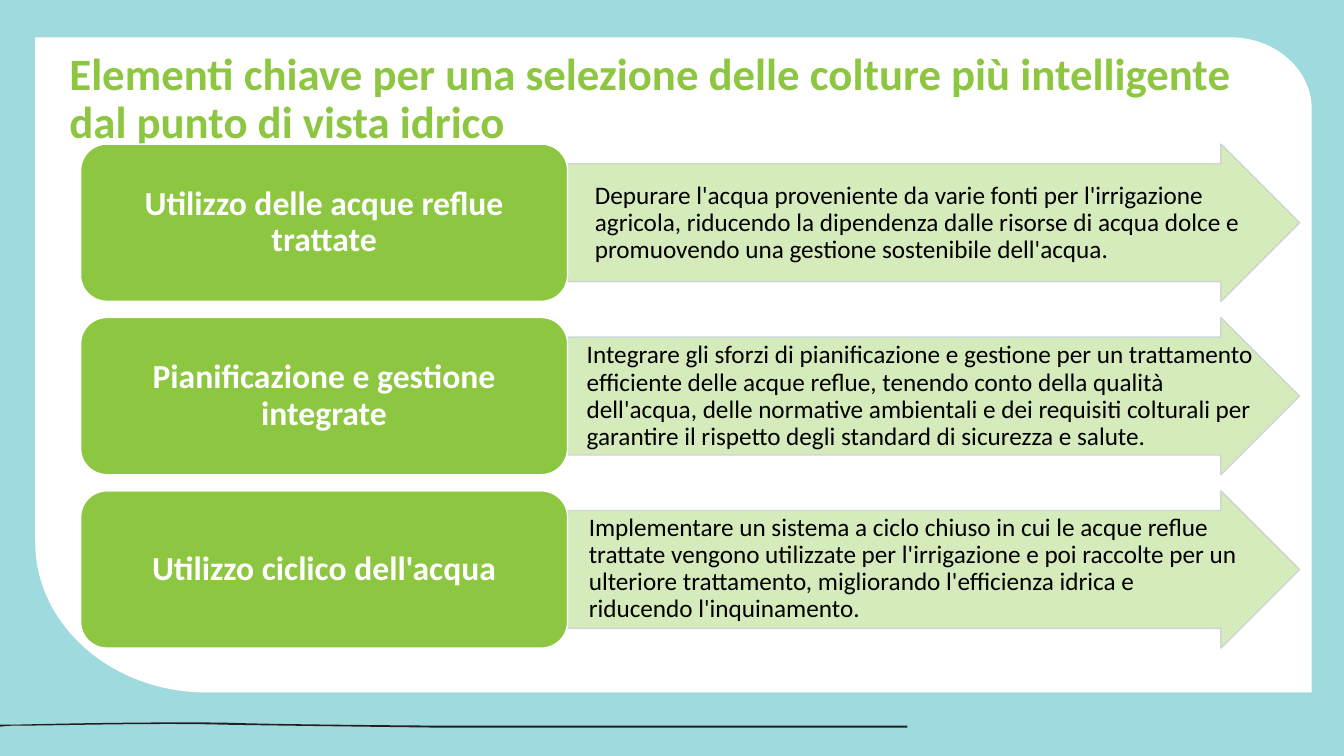
import pptx
import pptx.util
import pptx.dml.color
import pptx.enum.shapes
import pptx.enum.text
import pptx.oxml.ns
import lxml.etree

PX = 9144
MSO = pptx.enum.shapes.MSO_SHAPE
ANCHOR = pptx.enum.text.MSO_ANCHOR
ALIGN = pptx.enum.text.PP_ALIGN
qn = pptx.oxml.ns.qn
GREEN = "8DC641"
PALE_GREEN = "D6EBBB"


def color(value):
    return pptx.dml.color.RGBColor.from_string(value)


prs = pptx.Presentation()
prs.slide_width = 1333 * PX
prs.slide_height = 750 * PX
s = prs.slides.add_slide(prs.slide_layouts[6])

backdrop = s.shapes.add_shape(MSO.RECTANGLE, 0, 0, 1333 * PX, 750 * PX)
backdrop.shadow.inherit = False
backdrop.fill.solid()
backdrop.fill.fore_color.rgb = color("9FDADF")
backdrop.line.fill.background()

panel = [
    [(35, 37)], [(1220, 37)],
    [(1265, 37), (1301, 69), (1301, 108)],
    [(1301, 687)], [(205, 687)],
    [(111, 687), (35, 620), (35, 538)],
]
wave = [
    [(900, 722)], [(443, 722)],
    [(441, 722), (280, 720), (223, 719)],
    [(155, 717), (52, 720), (14, 720)],
    [(6, 720), (1, 721), (0, 721)],
    [(0, 719)],
    [(1, 719), (6, 719), (14, 719)],
    [(52, 718), (155, 716), (223, 717)],
    [(281, 719), (441, 720), (443, 720)],
    [(900, 720)],
]

for segments, fill in ((panel, "FFFFFF"), (wave, "231F20")):
    points = [point for segment in segments for point in segment]
    builder = s.shapes.build_freeform(*points[0], scale=PX)
    builder.add_line_segments(points[1:], close=True)
    sp = builder.convert_to_shape()
    sp.shadow.inherit = False
    sp.fill.solid()
    sp.fill.fore_color.rgb = color(fill)
    sp.line.fill.background()
    lines = iter(list(sp._element.iter(qn("a:lnTo"))))
    for segment in segments[1:]:
        parts = [next(lines) for _ in segment]
        if len(parts) == 3:
            bezier = lxml.etree.Element(qn("a:cubicBezTo"))
            parts[0].addprevious(bezier)
            for part in parts:
                bezier.append(part[0])
                part.getparent().remove(part)

title = s.shapes.add_textbox(59 * PX, 46 * PX, 1215 * PX, 88 * PX)
tf = title.text_frame
tf.word_wrap = True
p = tf.paragraphs[0]
p.text = "Elementi chiave per una selezione delle colture più intelligente dal punto di vista idrico"
p.line_spacing = 0.9
p.font.name = "Calibri"
p.font.size = pptx.util.Pt(32)
p.font.bold = True
p.font.color.rgb = color(GREEN)

rows = [
    ("Utilizzo delle acque reflue trattate",
     "Depurare l'acqua proveniente da varie fonti per l'irrigazione agricola, riducendo la dipendenza dalle risorse di acqua dolce e promuovendo una gestione sostenibile dell'acqua.",
     564, 163, 667, 26),
    ("Pianificazione e gestione integrate",
     "Integrare gli sforzi di pianificazione e gestione per un trattamento efficiente delle acque reflue, tenendo conto della qualità dell'acqua, delle normative ambientali e dei requisiti colturali per garantire il rispetto degli standard di sicurezza e salute.",
     556, 335, 703, 26),
    ("Utilizzo ciclico dell'acqua",
     "Implementare un sistema a ciclo chiuso in cui le acque reflue trattate vengono utilizzate per l'irrigazione e poi raccolte per un ulteriore trattamento, migliorando l'efficienza idrica e riducendo l'inquinamento.",
     564, 506, 667, 20),
]

for i, (label, description, left, text_top, width, indent) in enumerate(rows):
    top = 143 + 172 * i

    arrow = s.shapes.add_shape(MSO.RIGHT_ARROW, 563 * PX, top * PX, 726 * PX, 156 * PX)
    arrow.adjustments[0] = 0.75
    arrow.adjustments[1] = 0.5

    body = s.shapes.add_textbox(left * PX, text_top * PX, width * PX, 117 * PX)
    tf = body.text_frame
    tf.margin_left = indent * PX
    tf.margin_right = tf.margin_top = tf.margin_bottom = PX

    box = s.shapes.add_shape(MSO.ROUNDED_RECTANGLE, 80 * PX, top * PX, 483 * PX, 156 * PX)
    box.adjustments[0] = 0.167

    for sp, fill, line in ((arrow, PALE_GREEN, "CAD3D4"), (box, GREEN, "FFFFFF")):
        sp.shadow.inherit = False
        sp.fill.solid()
        sp.fill.fore_color.rgb = color(fill)
        sp.line.color.rgb = color(line)
        sp.line.width = pptx.util.Pt(1)
    line_color = arrow.line._ln.find(".//" + qn("a:srgbClr"))
    lxml.etree.SubElement(line_color, qn("a:alpha"), val="89000")

    for sp, text, size, bold, font_color, align in (
            (box, label, 24, True, "FFFFFF", ALIGN.CENTER),
            (body, description, 18, False, "000000", ALIGN.LEFT)):
        tf = sp.text_frame
        tf.word_wrap = True
        tf.vertical_anchor = ANCHOR.MIDDLE
        p = tf.paragraphs[0]
        p.text = text
        p.alignment = align
        p.line_spacing = 0.9
        p.font.name = "Calibri"
        p.font.size = pptx.util.Pt(size)
        p.font.bold = bold
        p.font.color.rgb = color(font_color)

prs.save("out.pptx")
